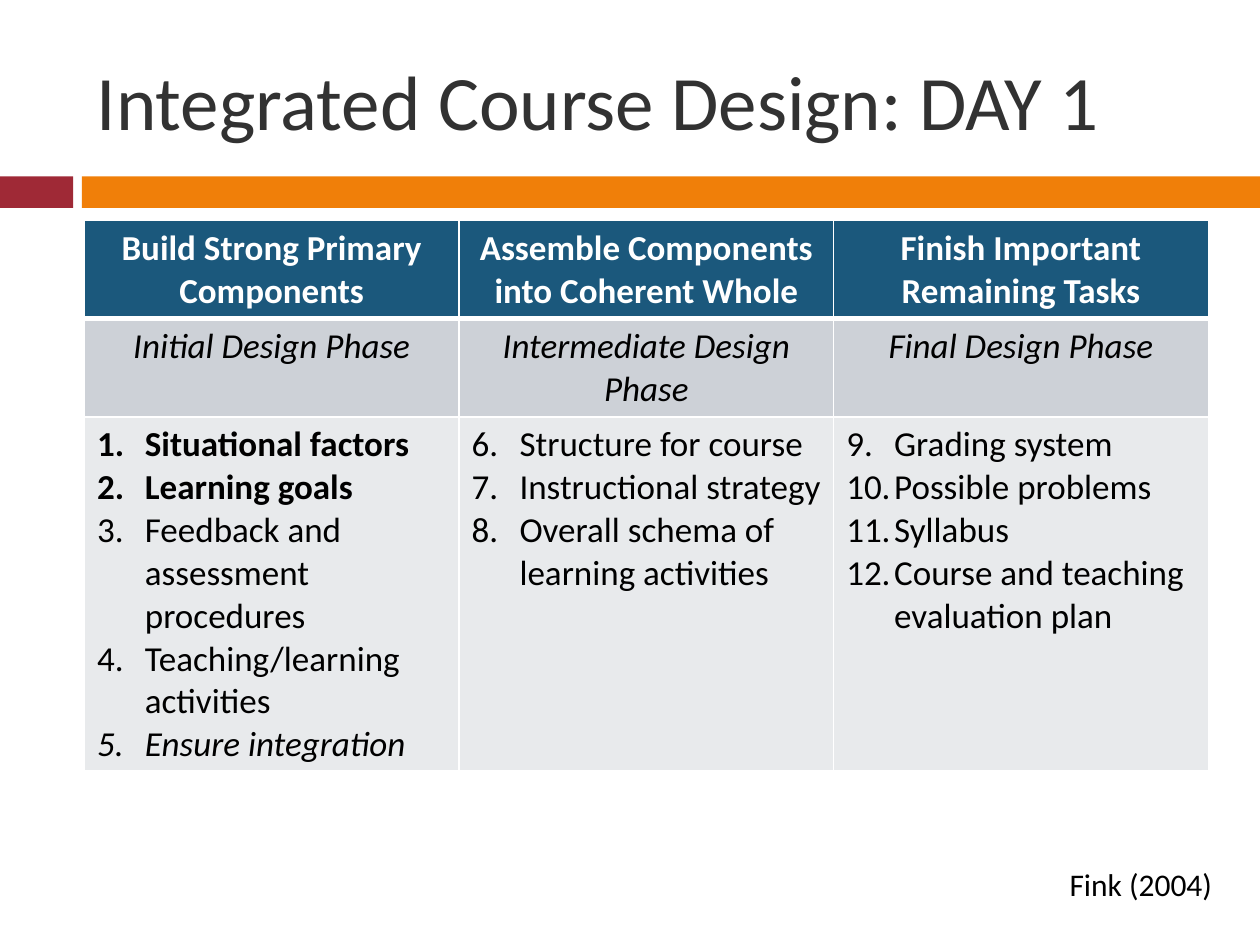
import pptx
import pptx.dml.color
import pptx.enum.shapes
import pptx.enum.text
import pptx.oxml
import pptx.oxml.ns
import pptx.util
import lxml.etree

Inches = pptx.util.Inches
RGBColor = pptx.dml.color.RGBColor
ALIGN = pptx.enum.text.PP_ALIGN
ANCHOR = pptx.enum.text.MSO_ANCHOR
qn = pptx.oxml.ns.qn

WHITE = RGBColor(0xFF, 0xFF, 0xFF)
BLACK = RGBColor(0, 0, 0)
GREY = RGBColor(0x32, 0x32, 0x32)
RED = RGBColor(0x9F, 0x29, 0x36)
ORANGE = RGBColor(0xF0, 0x7F, 0x09)
BLUE = RGBColor(0x1B, 0x58, 0x7C)
MID = RGBColor(0xCD, 0xD1, 0xD7)
PALE = RGBColor(0xE8, 0xEA, 0xEC)

HEADS = [
    "Build Strong Primary Components",
    "Assemble Components into Coherent Whole",
    "Finish Important Remaining Tasks",
]
PHASES = ["Initial Design Phase", "Intermediate Design Phase", "Final Design Phase"]
STEPS = [
    ["Situational factors", "Learning goals", "Feedback and assessment procedures",
     "Teaching/learning activities", "Ensure integration"],
    ["Structure for course", "Instructional strategy",
     "Overall schema of learning activities"],
    ["Grading system", "Possible problems", "Syllabus",
     "Course and teaching evaluation plan"],
]
BOLD = {"Situational factors", "Learning goals"}
ITALIC = {"Ensure integration"}
HEIGHTS = [0.78, 0.78, 2.81]


def write(para, text, size=20, color=BLACK, bold=False, italic=False, align=ALIGN.LEFT):
    para.alignment = align
    run = para.add_run()
    run.text = text
    font = run.font
    font.name = "Calibri"
    font.size = pptx.util.Pt(size)
    font.color.rgb = color
    font.bold = bold
    font.italic = italic


def add_bar(slide, left, width, color):
    bar = slide.shapes.add_shape(
        pptx.enum.shapes.MSO_SHAPE.RECTANGLE,
        Inches(left), Inches(1.4), Inches(width), Inches(0.25))
    bar.shadow.inherit = False
    bar.fill.solid()
    bar.fill.fore_color.rgb = color
    bar.line.fill.background()


def add_label(slide, box, text, wrap=True, anchor=ANCHOR.TOP, **style):
    frame = slide.shapes.add_textbox(*map(Inches, box)).text_frame
    frame.word_wrap = wrap
    frame.vertical_anchor = anchor
    write(frame.paragraphs[0], text, **style)
    return frame


def set_edges(cell, base):
    props = cell._tc.get_or_add_tcPr()
    widths = {"L": 1, "R": 1, "T": 1, "B": base}
    for spot, (side, width) in enumerate(widths.items()):
        line = pptx.oxml.parse_xml(
            f'<a:ln{side} {pptx.oxml.ns.nsdecls("a")} w="{pptx.util.Pt(width)}">'
            f'<a:solidFill><a:srgbClr val="{WHITE}"/></a:solidFill></a:ln{side}>')
        props.insert(spot, line)


def style_cell(cell, fill, base=1):
    cell.fill.solid()
    cell.fill.fore_color.rgb = fill
    set_edges(cell, base)


def add_steps(cell, steps, start):
    frame = cell.text_frame
    for spot, step in enumerate(steps):
        para = frame.add_paragraph() if spot else frame.paragraphs[0]
        write(para, step, bold=step in BOLD, italic=step in ITALIC)
        props = para._p.get_or_add_pPr()
        props.set("marL", str(Inches(0.38)))
        props.set("indent", str(-Inches(0.38)))
        lxml.etree.SubElement(props, qn("a:buFont"), typeface="+mj-lt")
        lxml.etree.SubElement(
            props, qn("a:buAutoNum"), type="arabicPeriod", startAt=str(start))


def add_plan(slide):
    table = slide.shapes.add_table(
        3, 3, Inches(0.67), Inches(1.75), Inches(8.92), Inches(sum(HEIGHTS))).table
    for row, height in zip(table.rows, HEIGHTS):
        row.height = Inches(height)
    start = 1
    for col, (head, phase, steps) in enumerate(zip(HEADS, PHASES, STEPS)):
        top, mid, low = (table.cell(row, col) for row in range(3))
        write(top.text_frame.paragraphs[0], head,
              color=WHITE, bold=True, align=ALIGN.CENTER)
        style_cell(top, BLUE, base=3)
        write(mid.text_frame.paragraphs[0], phase, italic=True, align=ALIGN.CENTER)
        style_cell(mid, MID)
        add_steps(low, steps, start)
        style_cell(low, PALE)
        start += len(steps)


def main():
    deck = pptx.Presentation()
    deck.slide_width = Inches(10)
    deck.slide_height = Inches(7.5)
    slide = deck.slides.add_slide(deck.slide_layouts[6])
    add_bar(slide, 0, 0.58, RED)
    add_bar(slide, 0.65, 9.35, ORANGE)
    add_label(slide, (0.67, 0.25, 8.92, 1.08), "Integrated Course Design: DAY 1",
              anchor=ANCHOR.MIDDLE, size=44, color=GREY)
    add_plan(slide)
    note = add_label(slide, (8.39, 6.82, 1.35, 0.4), "Fink (2004)",
                     wrap=False, size=18)
    note.auto_size = pptx.enum.text.MSO_AUTO_SIZE.SHAPE_TO_FIT_TEXT
    deck.save("out.pptx")


if __name__ == "__main__":
    main()
